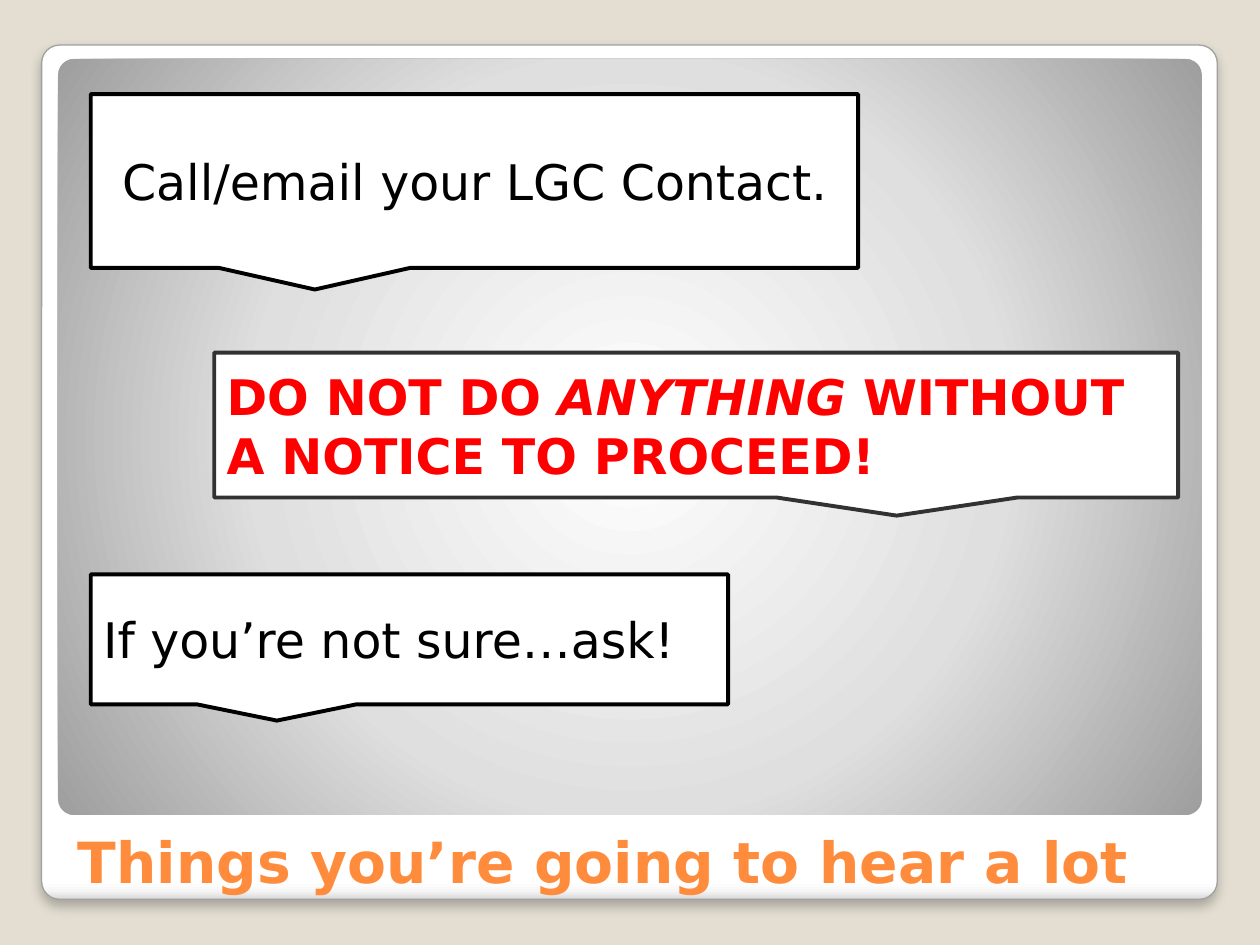
from dataclasses import dataclass

from lxml.etree import SubElement
from pptx import Presentation
from pptx.dml.color import RGBColor
from pptx.enum.shapes import MSO_SHAPE as Shape
from pptx.enum.text import MSO_ANCHOR as Anchor, PP_ALIGN as Align
from pptx.oxml.ns import qn
from pptx.util import Cm, Pt


@dataclass(frozen=True)
class Theme:
    font: str = "DejaVu Sans"
    title_size: float = 32.4
    body_size: float = 28
    background: str = "E3DED1"
    card_line: str = "A2A0A0"
    card_stops: tuple = ((0, "FFFFFF"), (98, "FFFFFF"), (99, "F6F6F6"), (100, "D8D8D8"))
    panel_stops: tuple = ((0, "FFFFFF"), (55, "DFDFDF"), (100, "9E9E9E"))
    title: str = "FF8C3C"
    paper: str = "FFFFFF"
    ink: str = "000000"
    soft_ink: str = "323232"
    warning: str = "FF0000"


@dataclass(frozen=True)
class Box:
    """A region in centimetres."""
    left: float
    top: float
    width: float
    height: float

    def inner(self, dx, dy, width, height):
        return Box(self.left + dx, self.top + dy, width, height)

    def lengths(self):
        return [Cm(n) for n in (self.left, self.top, self.width, self.height)]


THEME = Theme()
rgb = RGBColor.from_string


def apply_format(target, values):
    for name, value in values.items():
        setattr(target, name, value)


def add_color(parent, color):
    return SubElement(parent, qn("a:srgbClr"), val=color)


def fill_gradient(shape, stops, radial=False):
    """Fill downwards, or outwards from the centre if radial."""
    shape.fill.gradient()
    gradient = shape._element.spPr.find(qn("a:gradFill"))
    gradient.clear()
    stop_list = SubElement(gradient, qn("a:gsLst"))
    for percent, color in stops:
        add_color(SubElement(stop_list, qn("a:gs"), pos=str(percent * 1000)), color)
    if radial:
        circle = SubElement(gradient, qn("a:path"), path="circle")
        SubElement(circle, qn("a:fillToRect"), {side: "50000" for side in "ltrb"})
    else:
        SubElement(gradient, qn("a:lin"), ang="5400000", scaled="0")


def add_drop_shadow(shape):
    effects = shape._element.spPr.find(qn("a:effectLst"))
    shadow = SubElement(effects, qn("a:outerShdw"), blurRad=str(Pt(6)), dist=str(Pt(4)),
                        dir="5400000", algn="t", rotWithShape="0")
    SubElement(add_color(shadow, THEME.ink), qn("a:alpha"), val="25000")


def add_plain_shape(slide, kind, box, adjustments):
    shape = slide.shapes.add_shape(kind, *box.lengths())
    shape.shadow.inherit = False
    for index, value in enumerate(adjustments):
        shape.adjustments[index] = value
    return shape


def set_line(shape, color, points):
    shape.line.color.rgb = rgb(color)
    shape.line.width = Pt(points)


def write_text(shape, runs, size, color, frame_format, align=Align.LEFT):
    """Write one paragraph from (words, font format) pairs."""
    frame = shape.text_frame
    apply_format(frame, {"word_wrap": True, **frame_format})
    paragraph = frame.paragraphs[0]
    paragraph.alignment = align
    for words, font_format in runs:
        run = paragraph.add_run()
        run.text = words
        run.font.color.rgb = rgb(color)
        apply_format(run.font, {"name": THEME.font, "size": Pt(size), **font_format})


def add_backdrop(slide, card_box, panel_box):
    card = add_plain_shape(slide, Shape.ROUNDED_RECTANGLE, card_box, [0.021])
    fill_gradient(card, THEME.card_stops)
    set_line(card, THEME.card_line, 0.75)
    add_drop_shadow(card)

    panel = add_plain_shape(slide, Shape.ROUNDED_RECTANGLE, panel_box, [0.021])
    fill_gradient(panel, THEME.panel_stops, radial=True)
    panel.line.fill.background()


def add_title(slide, box, words):
    title = slide.shapes.add_textbox(*box.lengths())
    write_text(title, [(words, {"bold": True})], THEME.title_size, THEME.title,
               {"vertical_anchor": Anchor.BOTTOM})


def add_callout(slide, box, runs, tail=-0.208, line=THEME.ink, color=THEME.ink,
                align=Align.LEFT):
    """Add a speech box; tail is its tip's offset from the middle, as a share of width."""
    callout = add_plain_shape(slide, Shape.ROUNDED_RECTANGULAR_CALLOUT, box,
                              [tail, 0.625, 0])
    callout.fill.solid()
    callout.fill.fore_color.rgb = rgb(THEME.paper)
    set_line(callout, line, 2.25)
    margins = {f"margin_{side}": Cm(0.25) for side in ("left", "top", "right", "bottom")}
    write_text(callout, runs, THEME.body_size, color,
               {"vertical_anchor": Anchor.MIDDLE, **margins}, align)


def add_sayings(slide, panel):
    add_callout(slide, panel.inner(0.66, 0.71, 15.47, 3.5),
                [("Call/email your LGC Contact.", {})], align=Align.CENTER)
    bold = {"bold": True}
    add_callout(slide, panel.inner(3.15, 5.92, 19.43, 2.92),
                [("DO NOT DO ", bold), ("ANYTHING ", {**bold, "italic": True}),
                 ("WITHOUT A NOTICE TO PROCEED!", bold)],
                tail=0.208, line=THEME.soft_ink, color=THEME.warning)
    add_callout(slide, panel.inner(0.66, 10.39, 12.85, 2.62),
                [("If you’re not sure…ask!", {})])


def main():
    deck = Presentation()
    apply_format(deck, {"slide_width": Cm(25.4), "slide_height": Cm(19.05)})
    slide = deck.slides.add_slide(deck.slide_layouts[6])
    slide.background.fill.solid()
    slide.background.fill.fore_color.rgb = rgb(THEME.background)

    card = Box(0.84, 0.91, 23.7, 17.22)
    panel = card.inner(0.33, 0.28, 23.06, 15.24)
    add_backdrop(slide, card, panel)
    add_title(slide, card.inner(0.48, 14.33, 22.73, 2.92),
              "Things you’re going to hear a lot")
    add_sayings(slide, panel)
    deck.save("out.pptx")


if __name__ == "__main__":
    main()
